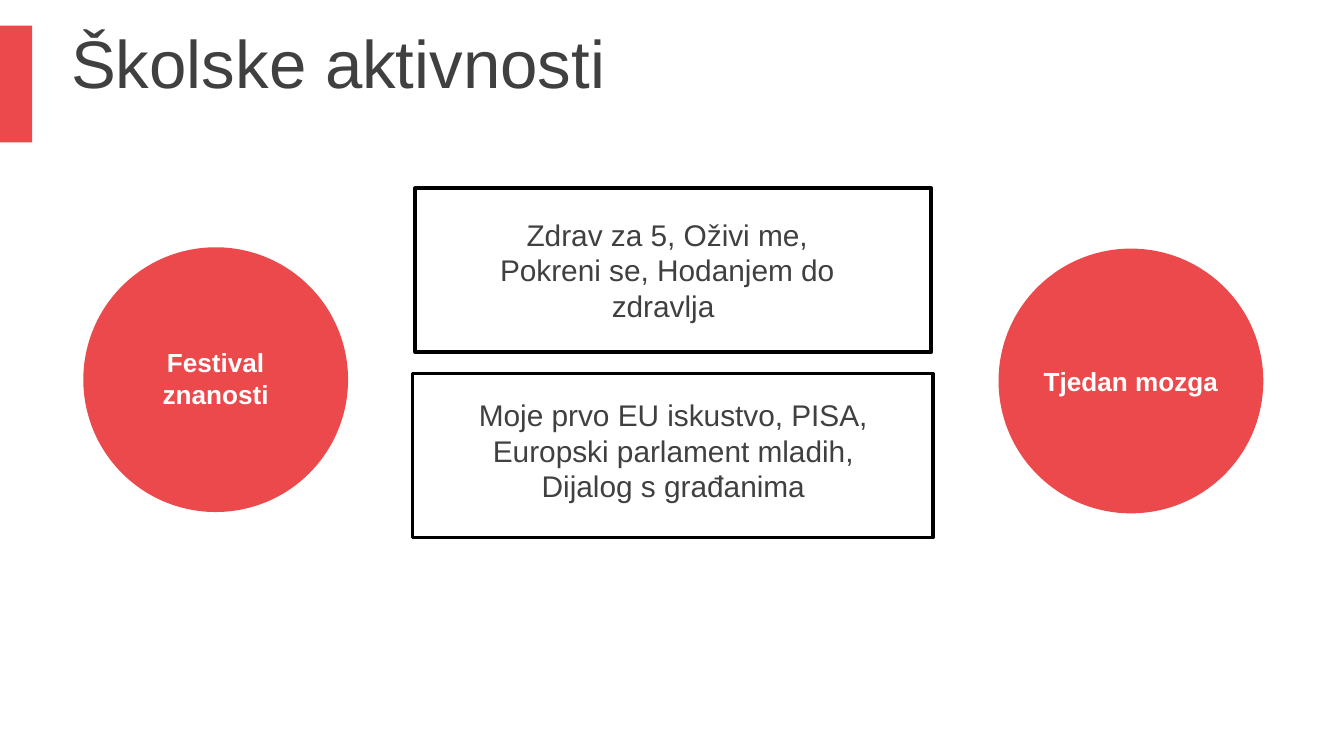
"""Build the slide of school activities."""
from pptx import Presentation
from pptx.dml.color import RGBColor
from pptx.enum.shapes import MSO_SHAPE
from pptx.enum.text import MSO_ANCHOR, MSO_AUTO_SIZE, PP_ALIGN
from pptx.util import Inches, Pt

RED = RGBColor(0xEB, 0x49, 0x4B)
GREY = RGBColor(0x40, 0x40, 0x40)
WHITE = RGBColor(0xFF, 0xFF, 0xFF)
BLACK = RGBColor(0, 0, 0)


def add_shape(kind, box, fill=None):
    shape = slide.shapes.add_shape(kind, *map(Inches, box))
    shape.shadow.inherit = False
    if fill is None:
        shape.fill.background()
        shape.line.color.rgb = BLACK
        shape.line.width = Pt(2)
    else:
        shape.fill.solid()
        shape.fill.fore_color.rgb = fill
        shape.line.fill.background()


def write(frame, text, size, color, align, bold=False):
    frame.word_wrap = True
    para = frame.paragraphs[0]
    para.alignment = align
    run = para.add_run()
    run.text = text
    run.font.name = "Arial"
    run.font.size = Pt(size)
    run.font.bold = bold
    run.font.color.rgb = color


deck = Presentation()
deck.slide_width = Inches(10)
deck.slide_height = Inches(10) * 9 // 16
slide = deck.slides.add_slide(deck.slide_layouts[5])

add_shape(MSO_SHAPE.RECTANGLE, (0, 0.19, 0.24, 0.87), RED)

title = slide.shapes.title
title.left, title.top = Inches(0.43), Inches(0.14)
title.width, title.height = Inches(7.64), Inches(0.63)
title.text_frame.auto_size = MSO_AUTO_SIZE.NONE
title.text_frame.vertical_anchor = MSO_ANCHOR.MIDDLE
write(title.text_frame, "Školske aktivnosti", 36, GREY, PP_ALIGN.LEFT)

circles = [
    ((0.62, 1.84, 1.97, 1.97), (0.74, 2.53, 1.73, 0.57), "Festival znanosti"),
    ((7.43, 1.85, 1.97, 1.97), (7.55, 2.67, 1.73, 0.34), "Tjedan mozga"),
]
frames = [
    ((3.09, 1.4, 3.84, 1.22), (3.51, 1.56, 2.91, 0.91),
     "Zdrav za 5, Oživi me, Pokreni se, Hodanjem do zdravlja "),
    ((3.07, 2.78, 3.87, 1.22), (3.22, 2.9, 3.58, 0.91),
     "Moje prvo EU iskustvo, PISA, Europski parlament mladih, "
     "Dijalog s građanima"),
]
groups = [
    (circles, MSO_SHAPE.OVAL, RED, 14, WHITE, True),
    (frames, MSO_SHAPE.RECTANGLE, None, 16, GREY, False),
]
for items, kind, fill, size, color, bold in groups:
    for outer, inner, text in items:
        add_shape(kind, outer, fill)
        label = slide.shapes.add_textbox(*map(Inches, inner))
        write(label.text_frame, text, size, color, PP_ALIGN.CENTER, bold)
        label.text_frame.auto_size = MSO_AUTO_SIZE.SHAPE_TO_FIT_TEXT

deck.save("out.pptx")
